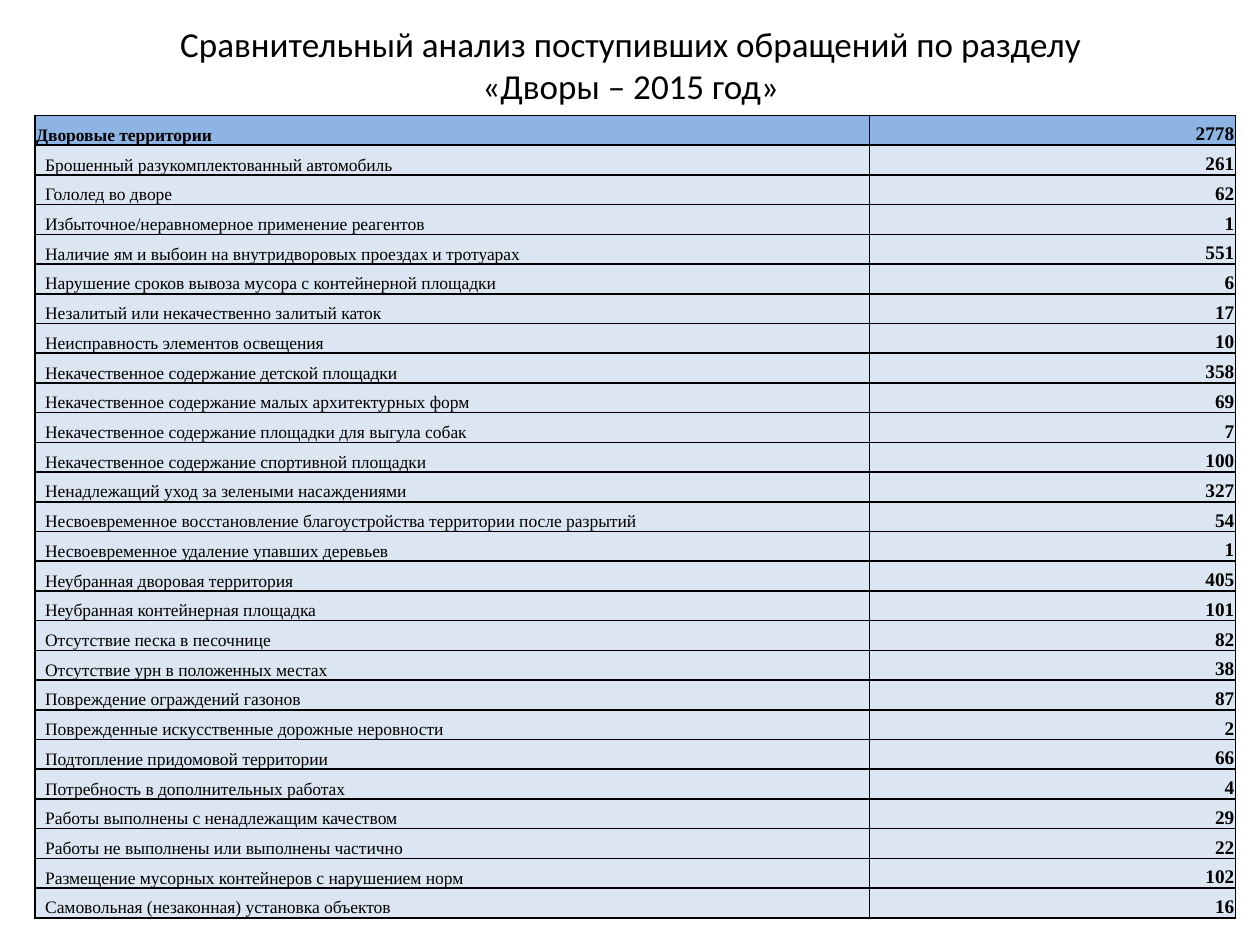
from dataclasses import dataclass

from lxml import etree
from pptx import Presentation
from pptx import util as u
from pptx.dml.color import RGBColor
from pptx.enum import text
from pptx.oxml.ns import qn


@dataclass(frozen=True)
class Theme:
    ink: str = "000000"
    total: str = "8EB4E3"
    row: str = "DCE6F2"
    title_font: str = "Calibri"
    table_font: str = "Times New Roman"
    title_size: float = 20
    label_size: float = 10
    value_size: float = 11
    border: float = 1


TITLE = "Сравнительный анализ поступивших обращений по разделу\v«Дворы – 2015 год»"

ROWS = [
    ("Дворовые территории", 2778),
    ("Брошенный разукомплектованный автомобиль", 261),
    ("Гололед во дворе", 62),
    ("Избыточное/неравномерное применение реагентов", 1),
    ("Наличие ям и выбоин на внутридворовых проездах и тротуарах", 551),
    ("Нарушение сроков вывоза мусора с контейнерной площадки", 6),
    ("Незалитый или некачественно залитый каток", 17),
    ("Неисправность элементов освещения", 10),
    ("Некачественное содержание детской площадки", 358),
    ("Некачественное содержание малых архитектурных форм", 69),
    ("Некачественное содержание площадки для выгула собак", 7),
    ("Некачественное содержание спортивной площадки", 100),
    ("Ненадлежащий уход за зелеными насаждениями", 327),
    ("Несвоевременное восстановление благоустройства территории после разрытий", 54),
    ("Несвоевременное удаление упавших деревьев", 1),
    ("Неубранная дворовая территория", 405),
    ("Неубранная контейнерная площадка", 101),
    ("Отсутствие песка в песочнице", 82),
    ("Отсутствие урн в положенных местах", 38),
    ("Повреждение ограждений газонов", 87),
    ("Поврежденные искусственные дорожные неровности", 2),
    ("Подтопление придомовой территории", 66),
    ("Потребность в дополнительных работах", 4),
    ("Работы выполнены с ненадлежащим качеством", 29),
    ("Работы не выполнены или выполнены частично", 22),
    ("Размещение мусорных контейнеров с нарушением норм", 102),
    ("Самовольная (незаконная) установка объектов", 16),
]


def set_attrs(obj, values):
    for name, value in values.items():
        setattr(obj, name, value)


class SlideBuilder:
    def __init__(self, s, theme):
        self.s = s
        self.theme = theme

    def paragraph(self, tf, content, align, **font):
        p = tf.paragraphs[0]
        p.text = content
        p.alignment = align
        for r in p.runs:
            set_attrs(r.font, font)
            r.font.color.rgb = RGBColor.from_string(self.theme.ink)

    def title(self, content, x, y, w, h):
        tf = self.s.shapes.add_textbox(u.Pt(x), u.Pt(y), u.Pt(w), u.Pt(h)).text_frame
        set_attrs(tf, {"word_wrap": True, "vertical_anchor": text.MSO_ANCHOR.MIDDLE})
        self.paragraph(tf, content, text.PP_ALIGN.CENTER,
                       name=self.theme.title_font, size=u.Pt(self.theme.title_size))

    def borders(self, cell):
        tc_pr = cell._tc.get_or_add_tcPr()
        for side in ("a:lnL", "a:lnR", "a:lnT", "a:lnB"):
            ln = etree.SubElement(tc_pr, qn(side), w=str(u.Pt(self.theme.border)))
            fill = etree.SubElement(ln, qn("a:solidFill"))
            etree.SubElement(fill, qn("a:srgbClr"), val=self.theme.ink)

    def cell(self, cell, content, fill, align, indent, size, bold):
        set_attrs(cell, {
            "margin_left": u.Pt(indent),
            "margin_top": u.Pt(0.7),
            "margin_right": u.Pt(0.7),
            "margin_bottom": u.Pt(0),
            "vertical_anchor": text.MSO_ANCHOR.BOTTOM,
        })
        self.borders(cell)
        cell.fill.solid()
        cell.fill.fore_color.rgb = RGBColor.from_string(fill)
        self.paragraph(cell.text_frame, content, align,
                       name=self.theme.table_font, size=u.Pt(size), bold=bold)

    def table(self, rows, x, y, widths, row_height):
        t = self.theme
        table = self.s.shapes.add_table(
            len(rows), len(widths), u.Pt(x), u.Pt(y),
            u.Pt(sum(widths)), u.Pt(row_height * len(rows))).table
        set_attrs(table, {"first_row": False, "horz_banding": False})
        for column, width in zip(table.columns, widths):
            column.width = u.Pt(width)
        for i, (label, value) in enumerate(rows):
            table.rows[i].height = u.Pt(row_height)
            is_total = i == 0
            fill = t.total if is_total else t.row
            self.cell(table.cell(i, 0), label, fill, text.PP_ALIGN.LEFT,
                      0.7 if is_total else 5.8, t.label_size, is_total)
            self.cell(table.cell(i, 1), str(value), fill, text.PP_ALIGN.RIGHT,
                      0.7, t.value_size, True)


def main():
    prs = Presentation()
    set_attrs(prs, {"slide_width": u.Pt(720), "slide_height": u.Pt(540)})
    s = prs.slides.add_slide(prs.slide_layouts[6])
    builder = SlideBuilder(s, Theme())
    builder.title(TITLE, 36.5, -8, 648, 90)
    builder.table(ROWS, 20, 66, (477, 209), 17)
    prs.save("out.pptx")


if __name__ == "__main__":
    main()
